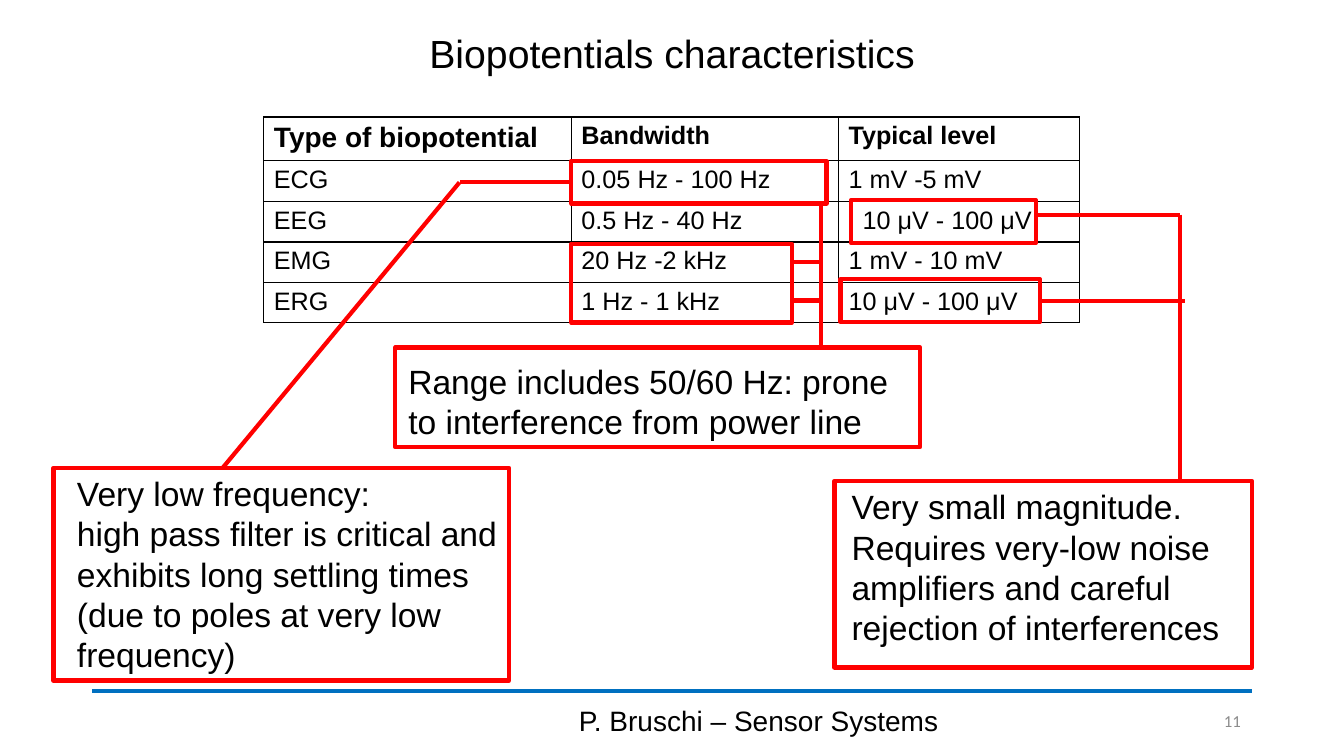
import dataclasses

import lxml.etree
import pptx
import pptx.dml.color
import pptx.enum.shapes
import pptx.enum.text
import pptx.oxml.ns
import pptx.util

Cm = pptx.util.Cm
Pt = pptx.util.Pt
ALIGN = pptx.enum.text.PP_ALIGN
ANCHOR = pptx.enum.text.MSO_ANCHOR
COLORS = {"text": "000000", "mark": "FF0000", "rule": "0070C0", "number": "8C8C8C"}
TABLE_ROWS = [
    ("Type of biopotential", "Bandwidth", "Typical level"),
    ("ECG", "0.05 Hz - 100 Hz", "1 mV -5 mV"),
    ("EEG", "0.5 Hz - 40 Hz", "10 μV - 100 μV"),
    ("EMG", "20 Hz -2 kHz", "1 mV - 10 mV"),
    ("ERG", "1 Hz - 1 kHz", "10 μV - 100 μV"),
]
COLUMN_WIDTHS = (7.75, 6.73, 6.07)
ROW_HEIGHTS = (1.05, 1.03, 0.99, 0.97, 0.97)


@dataclasses.dataclass
class Box:
    """A rectangle on the slide, in centimetres."""
    left: float
    top: float
    width: float
    height: float

    @property
    def right(self):
        return self.left + self.width

    @property
    def bottom(self):
        return self.top + self.height

    @property
    def middle(self):
        return self.top + self.height / 2

    def inner(self, left, top, width, height):
        """Return a box whose corner is given relative to this one."""
        return Box(self.left + left, self.top + top, width, height)

    def lengths(self):
        return [Cm(value) for value in (self.left, self.top, self.width, self.height)]


def rgb(name):
    return pptx.dml.color.RGBColor.from_string(COLORS[name])


def format_text(text_frame, size, color="text", font="Arial", bold=False, align=ALIGN.LEFT):
    for paragraph in text_frame.paragraphs:
        paragraph.alignment = align
        for run in paragraph.runs:
            run.font.name = font
            run.font.size = Pt(size)
            run.font.bold = bold
            run.font.color.rgb = rgb(color)


def add_line(slide, start, end, color="mark", width=3):
    line = slide.shapes.add_connector(
        pptx.enum.shapes.MSO_CONNECTOR.STRAIGHT, *[Cm(value) for value in (*start, *end)])
    line.line.color.rgb = rgb(color)
    line.line.width = Pt(width)
    lxml.etree.SubElement(line._element.spPr, pptx.oxml.ns.qn("a:effectLst"))


def add_frame(slide, box):
    frame = slide.shapes.add_shape(pptx.enum.shapes.MSO_SHAPE.RECTANGLE, *box.lengths())
    frame.shadow.inherit = False
    frame.fill.background()
    frame.line.color.rgb = rgb("mark")
    frame.line.width = Pt(3)
    return frame


def add_callout(slide, box, text, margin_left, margin_top=0.13):
    text_frame = add_frame(slide, box).text_frame
    text_frame.text = text
    text_frame.word_wrap = True
    text_frame.vertical_anchor = ANCHOR.TOP
    text_frame.margin_left = Cm(margin_left)
    text_frame.margin_top = Cm(margin_top)
    text_frame.margin_right = text_frame.margin_bottom = Cm(0.1)
    format_text(text_frame, 24)


def add_title(slide, box):
    title = slide.shapes.title
    title.left, title.top, title.width, title.height = box.lengths()
    title.text_frame.text = "Biopotentials characteristics"
    title.text_frame.vertical_anchor = ANCHOR.MIDDLE
    title.text_frame.paragraphs[0].line_spacing = 0.9
    format_text(title.text_frame, 28, align=ALIGN.CENTER)


def add_footer(slide, box):
    add_line(slide, (box.left, box.top), (box.right, box.top), "rule", 2.75)
    labels = [
        (box.inner(8.89, 0.23, 15.8, 1.02), "P. Bruschi – Sensor Systems",
         (20, "text", "Arial", False, ALIGN.CENTER)),
        (box.inner(26.75, 0.23, 2.44, 1.02), "11",
         (12, "number", "Calibri", False, ALIGN.RIGHT)),
    ]
    for label_box, text, text_format in labels:
        text_frame = slide.shapes.add_textbox(*label_box.lengths()).text_frame
        text_frame.text = text
        text_frame.word_wrap = True
        text_frame.vertical_anchor = ANCHOR.MIDDLE
        format_text(text_frame, *text_format)


def set_borders(cell):
    properties = cell._tc.get_or_add_tcPr()
    for side in ("lnL", "lnR", "lnT", "lnB"):
        border = lxml.etree.SubElement(
            properties, pptx.oxml.ns.qn(f"a:{side}"), w=str(Pt(1)))
        fill = lxml.etree.SubElement(border, pptx.oxml.ns.qn("a:solidFill"))
        lxml.etree.SubElement(fill, pptx.oxml.ns.qn("a:srgbClr"), val=COLORS["text"])


def add_biopotential_table(slide, box):
    table = slide.shapes.add_table(
        len(ROW_HEIGHTS), len(COLUMN_WIDTHS), *box.lengths()).table
    table.first_row = table.horz_banding = False
    for column, width in zip(table.columns, COLUMN_WIDTHS):
        column.width = Cm(width)
    for row_index, (row, height) in enumerate(zip(table.rows, ROW_HEIGHTS)):
        row.height = Cm(height)
        for column_index, cell in enumerate(row.cells):
            cell.text_frame.text = TABLE_ROWS[row_index][column_index]
            size = 20 if row_index == column_index == 0 else 18
            format_text(cell.text_frame, size, bold=row_index == 0)
            set_borders(cell)
            cell.fill.background()
    table.cell(2, 2).margin_left = Cm(0.61)


def add_annotations(slide, table_box):
    """Frame the notable table values and link them to their callouts."""
    low_band = table_box.inner(7.75, 1.11, 6.43, 1.07)
    wide_bands = table_box.inner(7.75, 3.2, 5.56, 1.98)
    eeg_level = table_box.inner(14.79, 2.1, 4.67, 1.07)
    erg_level = table_box.inner(14.53, 4.09, 5.03, 1.07)
    for mark in (low_band, wide_bands, eeg_level, erg_level):
        add_frame(slide, mark)

    low_frequency = table_box.inner(-5.3, 8.84, 11.48, 5.36)
    power_line = table_box.inner(3.31, 5.81, 13.23, 2.51)
    small_level = table_box.inner(14.38, 9.17, 10.52, 4.7)
    add_callout(slide, low_frequency,
                "Very low frequency:\nhigh pass filter is critical and exhibits long "
                "settling times (due to poles at very low frequency)", 0.59)
    add_callout(slide, power_line,
                "Range includes 50/60 Hz: prone to interference from power line", 0.33, 0.33)
    add_callout(slide, small_level,
                "Very small magnitude. Requires very-low noise amplifiers and careful "
                "rejection of interferences", 0.43)

    bend = (low_band.left - 2.82, low_band.middle)
    power_x = low_band.right - 0.15
    level_x = small_level.right - 1.81
    eeg_y = eeg_level.top + 0.36
    links = [
        ((low_band.left, low_band.middle), bend),
        (bend, (low_frequency.left + 4.26, low_frequency.top)),
        ((power_x, low_band.bottom), (power_x, power_line.top)),
        ((level_x, eeg_y), (level_x, small_level.top)),
        ((eeg_level.right, eeg_y), (level_x, eeg_y)),
        ((erg_level.right, erg_level.middle), (level_x + 0.13, erg_level.middle)),
    ]
    for offset in (0.45, 1.42):
        y = wide_bands.top + offset
        links.append(((wide_bands.right, y), (power_x, y)))
    for start, end in links:
        add_line(slide, start, end)


def main():
    presentation = pptx.Presentation()
    presentation.slide_width = Cm(33.87)
    presentation.slide_height = Cm(19.05)
    slide = presentation.slides.add_slide(presentation.slide_layouts.get_by_name("Title Only"))
    table_box = Box(6.65, 2.95, sum(COLUMN_WIDTHS), sum(ROW_HEIGHTS))
    add_title(slide, Box(2.33, 0.48, 29.21, 1.83))
    add_footer(slide, Box(2.33, 17.42, 29.21, 1.25))
    add_biopotential_table(slide, table_box)
    add_annotations(slide, table_box)
    presentation.save("out.pptx")


if __name__ == "__main__":
    main()
